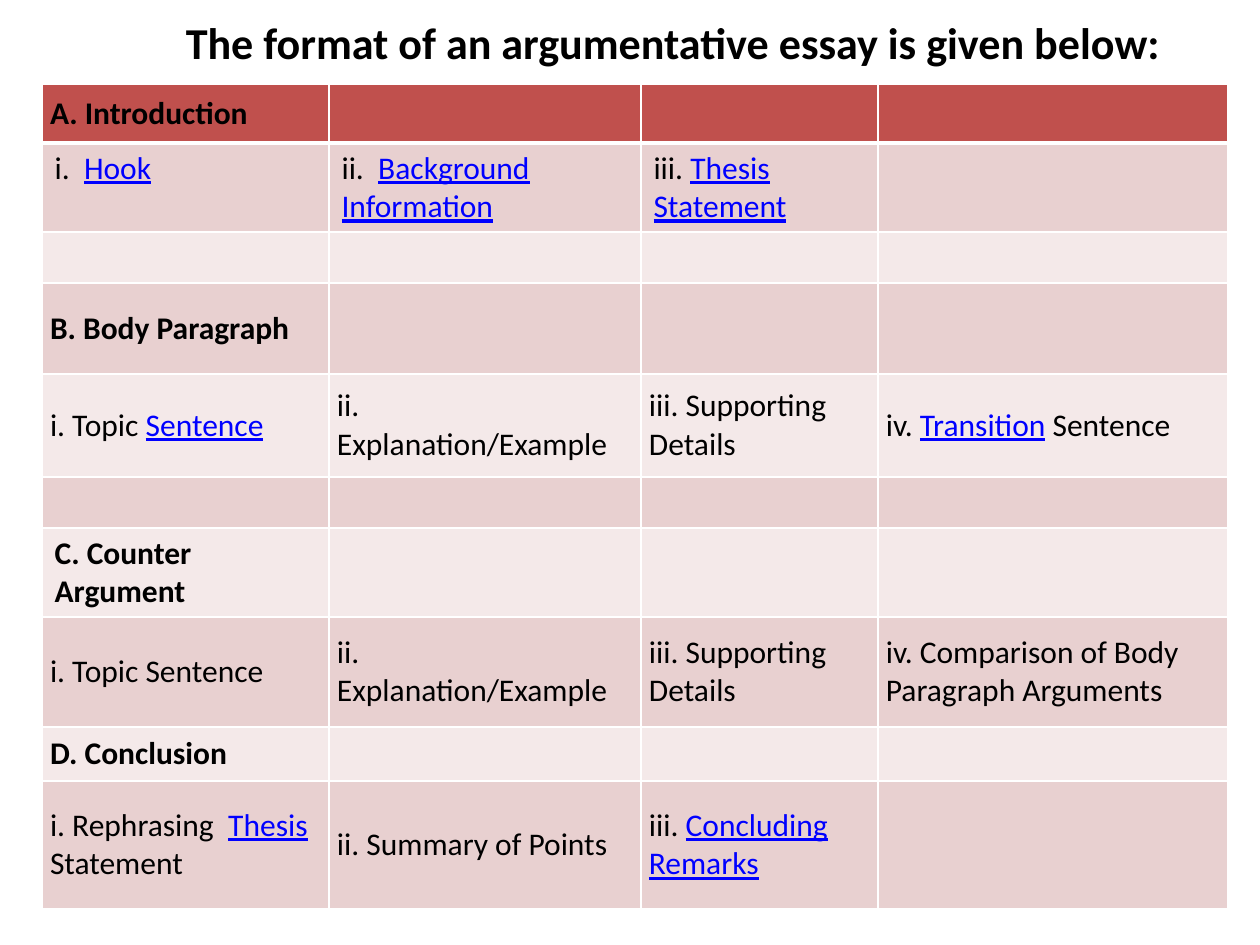
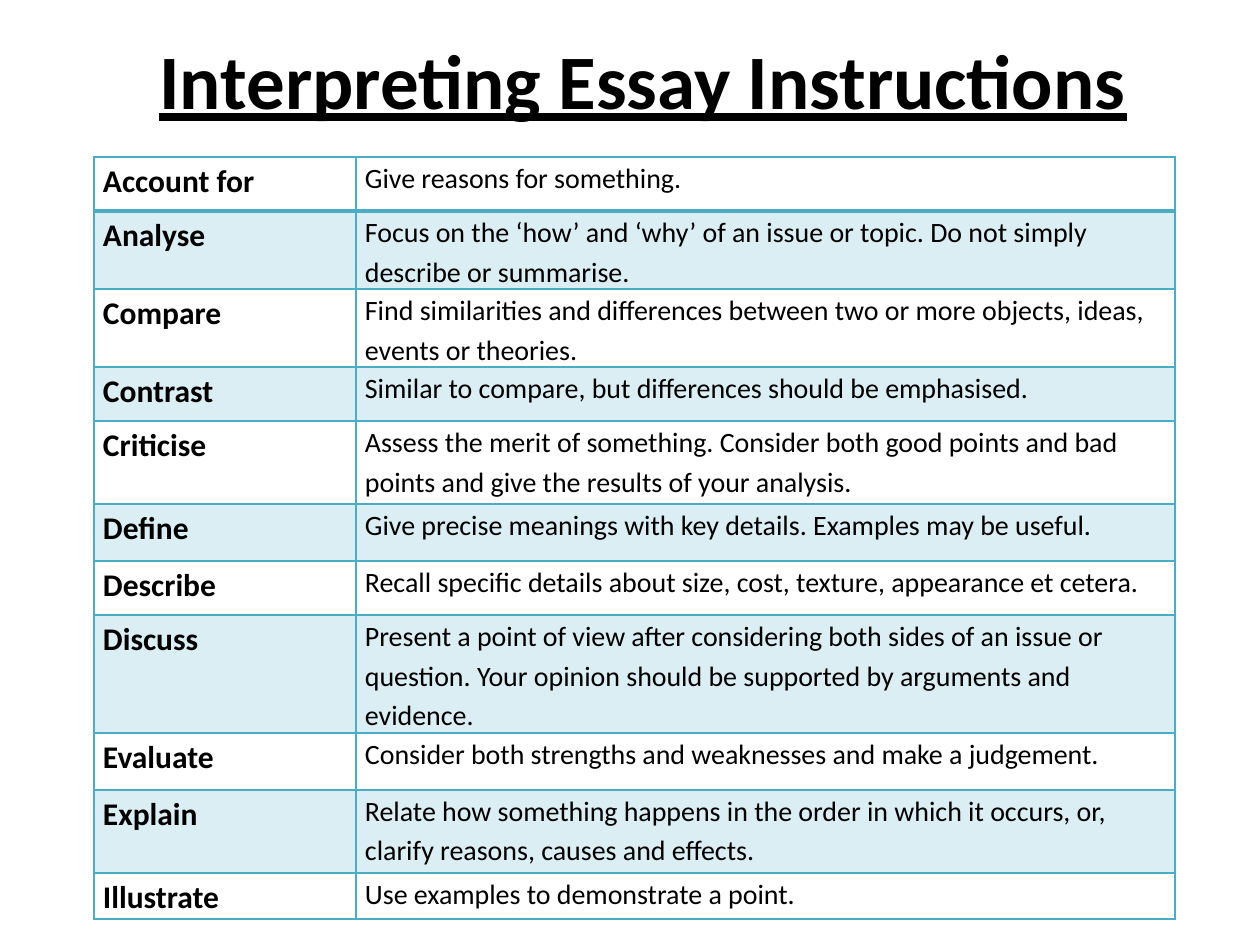
from dataclasses import dataclass

from lxml import etree
from pptx import Presentation
from pptx.dml.color import RGBColor
from pptx.enum.text import MSO_ANCHOR, PP_ALIGN
from pptx.oxml.ns import qn
from pptx.util import Emu, Pt

MIDDLE, TOP = MSO_ANCHOR.MIDDLE, MSO_ANCHOR.TOP
CENTER, JUSTIFY = PP_ALIGN.CENTER, PP_ALIGN.JUSTIFY


@dataclass(frozen=True)
class Theme:
    font: str = "Calibri"
    text: str = "000000"
    link: str = "0000FF"
    header: str = "C0504D"
    bands: tuple = ("E8D0D0", "F4E9E9")
    grid: str = "FFFFFF"
    accent: str = "4BACC6"
    accent_opacity: int = 20
    format_title: float = 25.2
    terms_title: int = 44
    body: int = 18
    meaning: int = 16


THEME = Theme()

# Essay format: "|" switches link style on and off
FORMAT_COLS = (287, 312, 237, 350)
FORMAT_ROWS = (
    (59, ("A. Introduction",)),
    (89, ("i.  |Hook", "ii.  |Background Information", "iii. |Thesis Statement")),
    (51, ()),
    (91, ("B. Body Paragraph",)),
    (103, ("i. Topic |Sentence", "ii. Explanation/Example",
           "iii. Supporting Details", "iv. |Transition| Sentence")),
    (51, ()),
    (89, ("C. Counter Argument",)),
    (110, ("i. Topic Sentence", "ii. Explanation/Example",
           "iii. Supporting Details", "iv. Comparison of Body Paragraph Arguments")),
    (54, ("D. Conclusion",)),
    (128, ("i. Rephrasing  |Thesis| Statement", "ii. Summary of Points",
           "iii. |Concluding Remarks")),
)
TOP_ROWS = (1, 6)  # rows set at the top with the wider margins

# Instruction words
TERM_COLS = (262, 819)
TERM_ROWS = (
    (54, ("Account for", "Give reasons for something.")),
    (78, ("Analyse", "Focus on the ‘how’ and ‘why’ of an issue or topic. "
          "Do not simply describe or summarise.")),
    (78, ("Compare", "Find similarities and differences between two or more "
          "objects, ideas, events or theories.")),
    (54, ("Contrast", "Similar to compare, but differences should be emphasised.")),
    (83, ("Criticise", "Assess the merit of something. Consider both good points "
          "and bad points and give the results of your analysis.")),
    (57, ("Define", "Give precise meanings with key details. Examples may be useful.")),
    (54, ("Describe", "Recall specific details about size, cost, texture, "
          "appearance et cetera.")),
    (118, ("Discuss", "Present a point of view after considering both sides of an "
           "issue or question. Your opinion should be supported by arguments "
           "and evidence.")),
    (57, ("Evaluate", "Consider both strengths and weaknesses and make a judgement.")),
    (83, ("Explain", "Relate how something happens in the order in which it occurs, "
          "or, clarify reasons, causes and effects.")),
    (46, ("Illustrate", "Use examples to demonstrate a point.")),
)


def px(n):
    return Emu(round(n * 914400 / 126))


def style_run(r, size, bold=False, underline=False, color=THEME.text):
    f = r.font
    f.name, f.size, f.bold, f.underline = THEME.font, Pt(size), bold, underline
    f.color.rgb = RGBColor.from_string(color)


def add_title(slide, box, text, size, align, underline=False):
    tf = slide.shapes.add_textbox(*map(px, box)).text_frame
    tf.word_wrap = True
    tf.vertical_anchor = MIDDLE
    p = tf.paragraphs[0]
    p.text = text
    p.alignment = align
    style_run(p.runs[0], size, True, underline)


def add_grid(slide, origin, cols, heights):
    size = sum(cols), sum(heights)
    table = slide.shapes.add_table(len(heights), len(cols),
                                   *map(px, origin + size)).table
    table.first_row = table.horz_banding = False
    for col, width in zip(table.columns, cols):
        col.width = px(width)
    for row, height in zip(table.rows, heights):
        row.height = px(height)
    return table


def fill_cell(cell, color, opacity=100):
    cell.fill.solid()
    cell.fill.fore_color.rgb = RGBColor.from_string(color)
    if opacity < 100:
        clr = cell._tc.get_or_add_tcPr().find(".//" + qn("a:srgbClr"))
        etree.SubElement(clr, qn("a:alpha"), val=str(opacity * 1000))


def set_borders(cell, color, top=1, bottom=1):
    tc_pr = cell._tc.get_or_add_tcPr()
    sides = (("L", 1), ("R", 1), ("T", top), ("B", bottom))
    for i, (side, width) in enumerate(sides):
        ln = etree.Element(qn("a:ln" + side), w=str(Pt(width)))
        solid = etree.SubElement(ln, qn("a:solidFill"))
        etree.SubElement(solid, qn("a:srgbClr"), val=color)
        tc_pr.insert(i, ln)


def rule_header(cell, row, color, width):
    """Thin grid, with a heavier line under the first row."""
    set_borders(cell, color, top=width if row == 1 else 1,
                bottom=width if row == 0 else 1)


def set_margins(cell, side, vertical):
    cell.margin_left = cell.margin_right = px(side)
    cell.margin_top = cell.margin_bottom = px(vertical)


def write_linked(cell, text, bold):
    p = cell.text_frame.paragraphs[0]
    for i, part in enumerate(text.split("|")):
        r = p.add_run()
        r.text = part
        linked = i % 2 == 1
        style_run(r, THEME.body, bold, linked, THEME.link if linked else THEME.text)


def format_table(slide, origin):
    table = add_grid(slide, origin, FORMAT_COLS, [h for h, _ in FORMAT_ROWS])
    for i, (_, texts) in enumerate(FORMAT_ROWS):
        for j in range(len(FORMAT_COLS)):
            cell = table.cell(i, j)
            fill_cell(cell, THEME.bands[(i - 1) % 2] if i else THEME.header)
            rule_header(cell, i, THEME.grid, 3)
            if j >= len(texts):
                continue
            if i not in TOP_ROWS:
                set_margins(cell, 8, 8)
                cell.vertical_anchor = MIDDLE
            write_linked(cell, texts[j], bold=len(texts) == 1)


def terms_table(slide, origin):
    table = add_grid(slide, origin, TERM_COLS, [h for h, _ in TERM_ROWS])
    for i, (_, texts) in enumerate(TERM_ROWS):
        for j, text in enumerate(texts):
            cell = table.cell(i, j)
            if i % 2:
                fill_cell(cell, THEME.accent, THEME.accent_opacity)
            else:
                cell.fill.background()
            rule_header(cell, i, THEME.accent, 2)
            set_margins(cell, 9, 0)
            cell.vertical_anchor = TOP
            p = cell.text_frame.paragraphs[0]
            p.text = text
            p.line_spacing = 1.15
            style_run(p.runs[0], THEME.meaning if j else THEME.body, bold=j == 0)


def format_slide(slide):
    add_title(slide, (136, 0, 1074, 84),
              "The format of an argumentative essay is given below:",
              THEME.format_title, CENTER)
    format_table(slide, (42, 84))


def terms_slide(slide):
    add_title(slide, (147, 42, 1042, 73), "Interpreting Essay Instructions",
              THEME.terms_title, JUSTIFY, underline=True)
    terms_table(slide, (94, 157))


def main():
    prs = Presentation()
    prs.slide_width, prs.slide_height = px(1260), px(945)
    blank = prs.slide_layouts[6]
    for build in (format_slide, terms_slide):
        build(prs.slides.add_slide(blank))
    prs.save("out.pptx")


if __name__ == "__main__":
    main()
